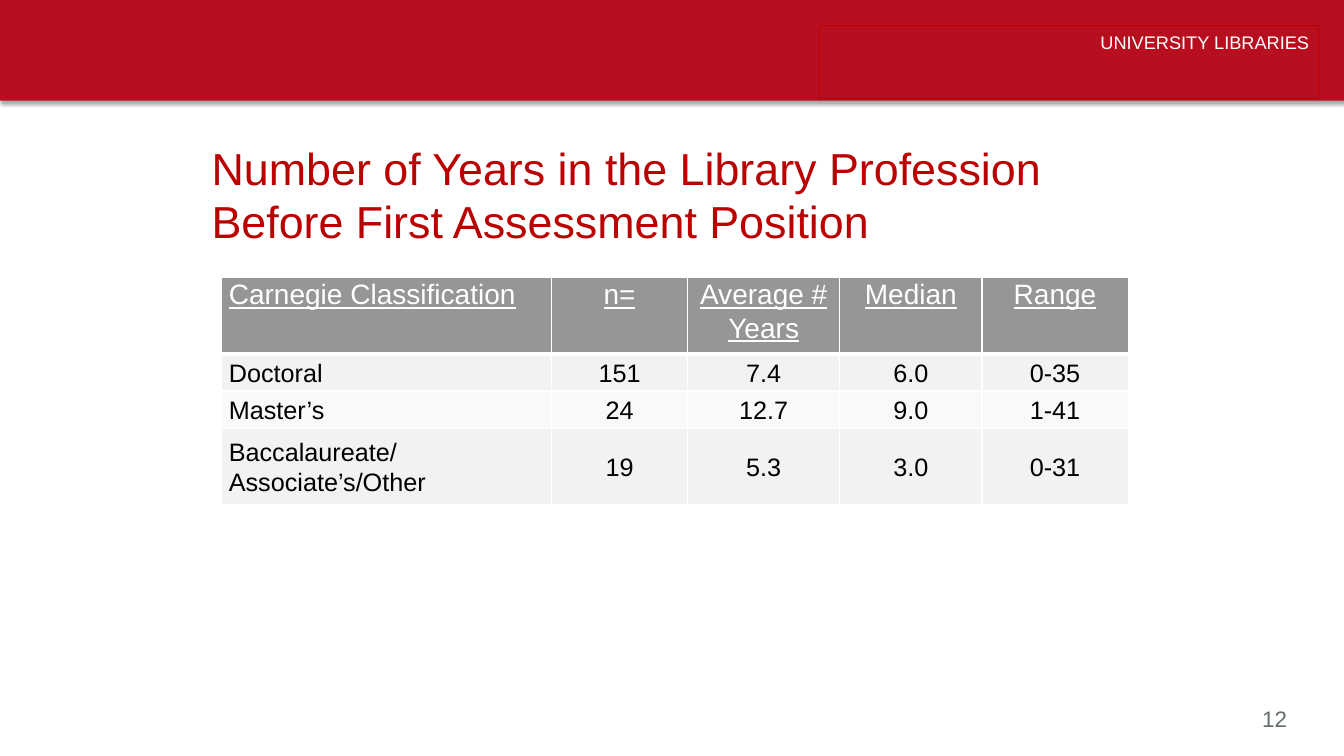
import lxml.etree
import pptx
import pptx.dml.color
import pptx.enum.shapes
import pptx.enum.text
import pptx.oxml
import pptx.oxml.ns
import pptx.util

Inches = pptx.util.Inches
Pt = pptx.util.Pt
RGBColor = pptx.dml.color.RGBColor
ALIGN = pptx.enum.text.PP_ALIGN
ANCHOR = pptx.enum.text.MSO_ANCHOR
RECT = pptx.enum.shapes.MSO_SHAPE.RECTANGLE
qn = pptx.oxml.ns.qn

BANNER_RED = RGBColor(0xB7, 0x0F, 0x20)
TITLE_RED = RGBColor(0xBB, 0x00, 0x00)
WHITE = RGBColor(0xFF, 0xFF, 0xFF)
BLACK = RGBColor(0x00, 0x00, 0x00)
HEADER_GREY = RGBColor(0x96, 0x96, 0x96)
BAND_DARK = RGBColor(0xF2, 0xF2, 0xF2)
BAND_LIGHT = RGBColor(0xF9, 0xF9, 0xF9)
NUMBER_GREY = RGBColor(0x63, 0x6D, 0x6E)

COLUMNS = [3.27, 1.35, 1.51, 1.41, 1.45]
ROW_HEIGHTS = [0.76, 0.37, 0.37, 0.76]
ROWS = [
    ["Carnegie Classification", "n=", "Average # Years", "Median", "Range"],
    ["Doctoral", "151", "7.4", "6.0", "0-35"],
    ["Master’s", "24", "12.7", "9.0", "1-41"],
    ["Baccalaureate/\nAssociate’s/Other", "19", "5.3", "3.0", "0-31"],
]


def add_run(p, text, size, color, underline=None):
    """Append a formatted Arial run to a paragraph."""
    r = p.add_run()
    r.text = text
    r.font.name = "Arial"
    r.font.size = Pt(size)
    r.font.color.rgb = color
    r.font.underline = underline


def add_shadow(sp):
    """Give a shape a soft shadow straight below it."""
    sp.shadow.inherit = False
    effects = sp._element.spPr.find(qn("a:effectLst"))
    shadow = lxml.etree.SubElement(effects, qn("a:outerShdw"), blurRad=str(Pt(3.1)),
                                   dist=str(Pt(1.8)), dir="5400000", rotWithShape="0")
    color = lxml.etree.SubElement(shadow, qn("a:srgbClr"), val=str(BLACK))
    lxml.etree.SubElement(color, qn("a:alpha"), val="35000")


def add_banner(s, left, top, width, height):
    """Draw the red banner with the outlined department label at its right."""
    sp = s.shapes.add_shape(RECT, Inches(left), Inches(top), Inches(width), Inches(height))
    sp.fill.solid()
    sp.fill.fore_color.rgb = BANNER_RED
    sp.line.fill.background()
    add_shadow(sp)

    label = s.shapes.add_shape(RECT, Inches(left + width - 5.2), Inches(top + 0.25),
                               Inches(4.95), Inches(0.73))
    label.shadow.inherit = False
    label.fill.background()
    label.line.color.rgb = TITLE_RED
    label.line.width = Pt(0.75)
    tf = label.text_frame
    tf.word_wrap = True
    tf.vertical_anchor = ANCHOR.TOP
    p = tf.paragraphs[0]
    p.alignment = ALIGN.RIGHT
    p.line_spacing = Pt(16.4)
    add_run(p, "UNIVERSITY LIBRARIES", 13, WHITE)


def add_text(s, left, top, width, height, text, size, color, wrap=True, anchor=ANCHOR.TOP):
    """Place a left-aligned text box."""
    box = s.shapes.add_textbox(Inches(left), Inches(top), Inches(width), Inches(height))
    tf = box.text_frame
    tf.word_wrap = wrap
    tf.vertical_anchor = anchor
    add_run(tf.paragraphs[0], text, size, color)


def set_borders(cell, top, bottom):
    """Draw white cell borders with the given top and bottom widths in points."""
    tcPr = cell._tc.get_or_add_tcPr()
    for i, (side, width) in enumerate([("L", 1), ("R", 1), ("T", top), ("B", bottom)]):
        ln = pptx.oxml.parse_xml(
            f'<a:ln{side} {pptx.oxml.ns.nsdecls("a")} w="{Pt(width)}"><a:solidFill>'
            f'<a:srgbClr val="{WHITE}"/></a:solidFill></a:ln{side}>')
        tcPr.insert(i, ln)


def fill_cell(cell, text, row, col):
    """Write and format one table cell according to its row and column."""
    header = row == 0
    cell.fill.solid()
    cell.fill.fore_color.rgb = HEADER_GREY if header else BAND_DARK if row % 2 else BAND_LIGHT
    set_borders(cell, 3 if row == 1 else 1, 3 if header else 1)
    cell.margin_left = cell.margin_right = Inches(0.07)
    cell.margin_top = cell.margin_bottom = 0
    cell.vertical_anchor = ANCHOR.TOP if header else ANCHOR.MIDDLE
    tf = cell.text_frame
    for i, line in enumerate(text.split("\n")):
        p = tf.add_paragraph() if i else tf.paragraphs[0]
        p.alignment = ALIGN.CENTER if col else ALIGN.LEFT
        p.line_spacing = 1.07
        add_run(p, line, 20 if header else 18, WHITE if header else BLACK, header)


def add_years_table(s, left, top):
    """Build the table of years by Carnegie classification."""
    frame = s.shapes.add_table(len(ROWS), len(COLUMNS), Inches(left), Inches(top),
                               Inches(sum(COLUMNS)), Inches(sum(ROW_HEIGHTS)))
    table = frame.table
    for column, width in zip(table.columns, COLUMNS):
        column.width = Inches(width)
    for row, texts in enumerate(ROWS):
        table.rows[row].height = Inches(ROW_HEIGHTS[row])
        for col, text in enumerate(texts):
            fill_cell(table.cell(row, col), text, row, col)
    table.cell(0, 2).text_frame.paragraphs[0].space_after = Pt(6)


def main():
    """Build and save the slide."""
    prs = pptx.Presentation()
    prs.slide_width = Inches(13.33)
    prs.slide_height = Inches(7.5)
    s = prs.slides.add_slide(prs.slide_layouts[6])
    add_banner(s, 0, 0, 13.33, 1)
    add_text(s, 12.42, 6.95, 0.48, 0.37, "12", 16, NUMBER_GREY, wrap=False)
    add_text(s, 2, 1.32, 9.05, 1.21,
             "Number of Years in the Library Profession Before First Assessment Position",
             32, TITLE_RED, anchor=ANCHOR.MIDDLE)
    add_years_table(s, 2.2, 2.75)
    prs.save("out.pptx")


if __name__ == "__main__":
    main()
